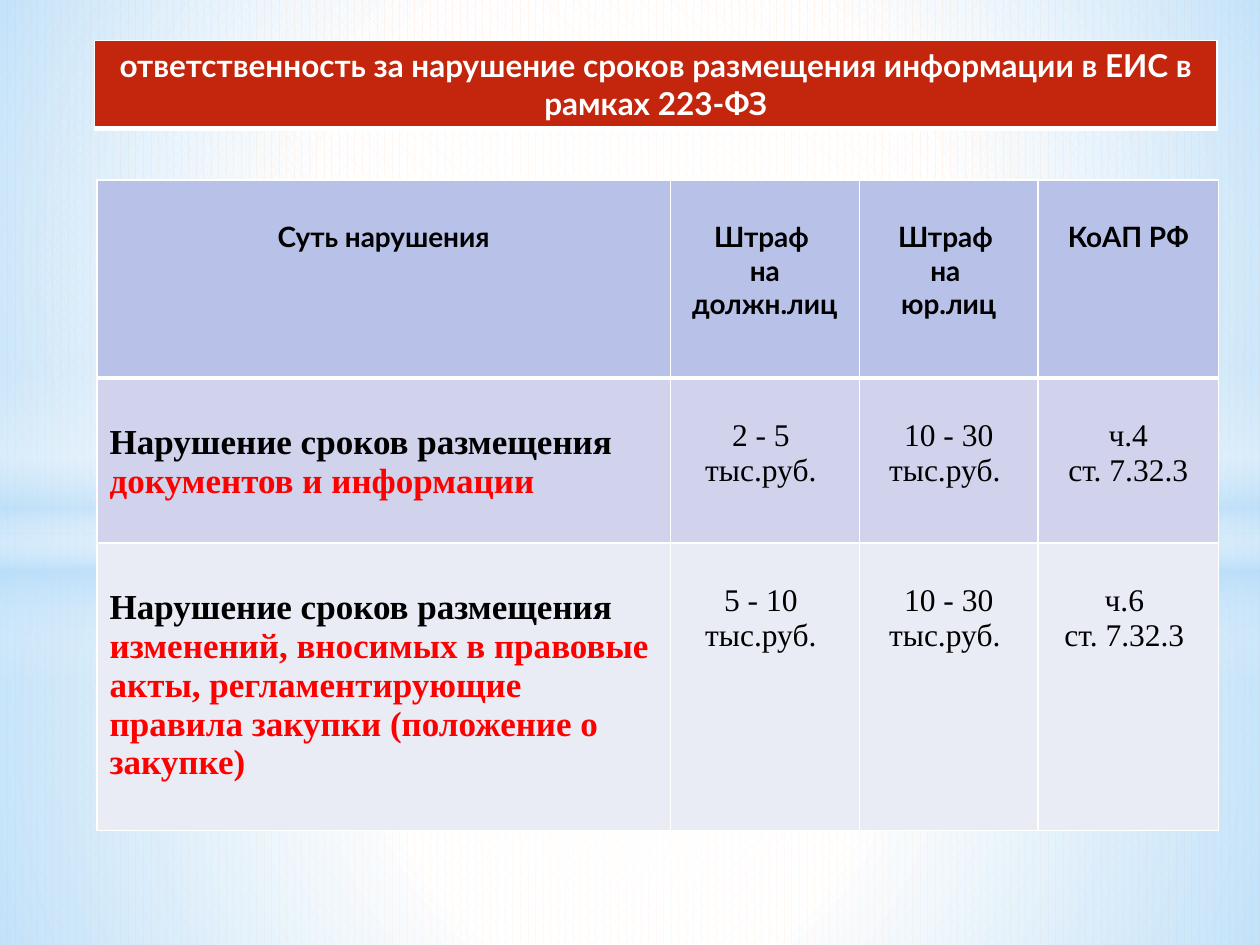
from dataclasses import dataclass
from lxml.etree import SubElement
from pptx import Presentation
from pptx.dml.color import RGBColor
from pptx.enum.dml import MSO_PATTERN
from pptx.enum.shapes import MSO_SHAPE
from pptx.enum.text import PP_ALIGN
from pptx.oxml.ns import qn
from pptx.util import Inches, Pt


@dataclass(frozen=True)
class Theme:
    """Colours, fonts and type sizes of the slide."""
    white: str = "FFFFFF"
    black: str = "000000"
    red: str = "FF0000"
    brick: str = "C3260C"
    sky: str = "B4DCFA"
    peach: str = "FFE6D3"
    rows: tuple = ("B8C2E9", "D0D3EB", "E9EBF5")
    sans: str = "Lato"
    serif: str = "Times New Roman"
    head: int = 16
    body: int = 18
    lead: int = 20


T = Theme()
SIDES = ("lnL", "lnR", "lnT", "lnB")
TITLE = "ответственность за нарушение сроков размещения информации в ЕИС в рамках 223-ФЗ"
HEADS = (["Суть нарушения"], ["Штраф ", "на должн.лиц"],
         ["Штраф ", "на ", "юр.лиц"], ["КоАП РФ"])
LEAD = "Нарушение сроков размещения "
FINES = (
    ("документов и информации",
     ["2 - 5 ", "тыс.руб. "], ["10 - 30 тыс.руб. "], ["ч.4", "ст. 7.32.3"]),
    ("изменений, вносимых в правовые акты, регламентирующие правила закупки (положение о закупке)",
     ["5 - 10 ", "тыс.руб. "], ["10 - 30 тыс.руб. "], ["ч.6 ", "ст. 7.32.3 "]),
)


def sub(node, tag, **attrs):
    """Add a drawing element to a node."""
    return SubElement(node, qn("a:" + tag), {k: str(v) for k, v in attrs.items()})


def assign(obj, form):
    """Set attributes from a dict of format values."""
    for key, value in form.items():
        setattr(obj, key, value)


def glow(slide, box, kind, stops, angle=None):
    """Place a borderless shape with a soft gradient."""
    shape = slide.shapes.add_shape(kind, *map(Inches, box))
    shape.shadow.inherit = False
    shape.line.fill.background()
    shape.fill.gradient()
    grad = shape.fill._xPr.find(qn("a:gradFill"))
    for child in list(grad):
        grad.remove(child)
    stack = sub(grad, "gsLst")
    for pos, tint, alpha in stops:
        stop = sub(stack, "gs", pos=pos * 1000)
        sub(sub(stop, "srgbClr", val=tint), "alpha", val=alpha * 1000)
    if angle is None:
        ring = sub(grad, "path", path="circle")
        sub(ring, "fillToRect", **dict.fromkeys("ltrb", 50000))
    else:
        sub(grad, "lin", ang=angle * 60000, scaled=0)


def backdrop(slide, box):
    """Fill the background and lay the glows over the box."""
    fill = slide.background.fill
    fill.patterned()
    fill.pattern = MSO_PATTERN.PERCENT_60
    fill.fore_color.rgb = RGBColor.from_string(T.peach)
    fill.back_color.rgb = RGBColor.from_string(T.white)
    left, top, wide, high = box
    cut = 4.23
    rect = MSO_SHAPE.RECTANGLE
    glow(slide, (left, top + cut, wide, high - cut), rect,
         [(0, T.white, 91), (37, T.white, 76), (100, T.sky, 79)])
    glow(slide, (left, top, wide, cut), rect,
         [(0, T.white, 89), (48, T.white, 62), (100, T.sky, 79)])
    glow(slide, (left, top + 2.9, wide, 2.5), rect,
         [(0, T.white, 0), (29, T.white, 30), (45, T.sky, 40),
          (55, T.white, 26), (65, T.sky, 60), (100, T.white, 0)], 90)
    glow(slide, (left, top + 1.75, wide, 5.58), MSO_SHAPE.OVAL,
         [(0, T.white, 100), (54, T.white, 0)])


def grid(slide, box, cols, rows):
    """Add a plain table with given column widths and row heights."""
    table = slide.shapes.add_table(len(rows), len(cols), *map(Inches, box)).table
    assign(table, dict(first_row=False, horz_banding=False))
    for col, wide in zip(table.columns, cols):
        col.width = Inches(wide)
    for row, high in zip(table.rows, rows):
        row.height = Inches(high)
    return table


def paint(cell, tint, top=1, base=1):
    """Give a cell white borders and a fill."""
    props = cell._tc.get_or_add_tcPr()
    for side, size in zip(SIDES, (1, 1, top, base)):
        line = sub(props, side, w=Pt(size))
        sub(sub(line, "solidFill"), "srgbClr", val=T.white)
    cell.fill.solid()
    cell.fill.fore_color.rgb = RGBColor.from_string(tint)


def write(cell, lines, form, pad=0.05, align=PP_ALIGN.CENTER):
    """Write lines of (text, colour) runs into a cell."""
    cell.margin_top = Inches(pad)
    frame = cell.text_frame
    for i, runs in enumerate(lines):
        para = frame.add_paragraph() if i else frame.paragraphs[0]
        para.alignment = align
        for text, tint in runs:
            run = para.add_run()
            run.text = text
            assign(run.font, form)
            run.font.color.rgb = RGBColor.from_string(tint)


def banner(slide, box):
    """Place the title bar."""
    cell = grid(slide, box, [box[2]], [box[3]]).cell(0, 0)
    paint(cell, T.brick, base=3)
    write(cell, [[(TITLE, T.white)]], dict(name=T.sans, size=Pt(T.body), bold=True))


def fines(slide, box):
    """Place the table of offences and fines."""
    table = grid(slide, box, (4.55, 1.5, 1.42, 1.43), (1.57, 1.31, 2.28))
    head = dict(name=T.sans, size=Pt(T.head), bold=True)
    lead = dict(name=T.serif, size=Pt(T.lead), bold=True)
    body = dict(name=T.serif, size=Pt(T.body), bold=False)
    for r, tint in enumerate(T.rows):
        for cell in table.rows[r].cells:
            paint(cell, tint, top=3 if r == 1 else 1, base=1 if r else 3)
    for c, lines in enumerate(HEADS):
        write(table.cell(0, c), [[(line, T.black)] for line in lines], head, 0.32)
    for r, (what, *rest) in enumerate(FINES, 1):
        write(table.cell(r, 0), [[(LEAD, T.black), (what, T.red)]], lead, 0.36, PP_ALIGN.LEFT)
        for c, lines in enumerate(rest, 1):
            write(table.cell(r, c), [[(line, T.black)] for line in lines], body, 0.32)


def main():
    """Build and save the slide."""
    deck = Presentation()
    assign(deck, dict(slide_width=Inches(10), slide_height=Inches(7.5)))
    slide = deck.slides.add_slide(deck.slide_layouts[6])
    backdrop(slide, (0, 0, 10, 7.5))
    fines(slide, (0.77, 1.43, 8.9, 5.16))
    banner(slide, (0.75, 0.32, 8.91, 0.7))
    deck.save("out.pptx")


if __name__ == "__main__":
    main()
